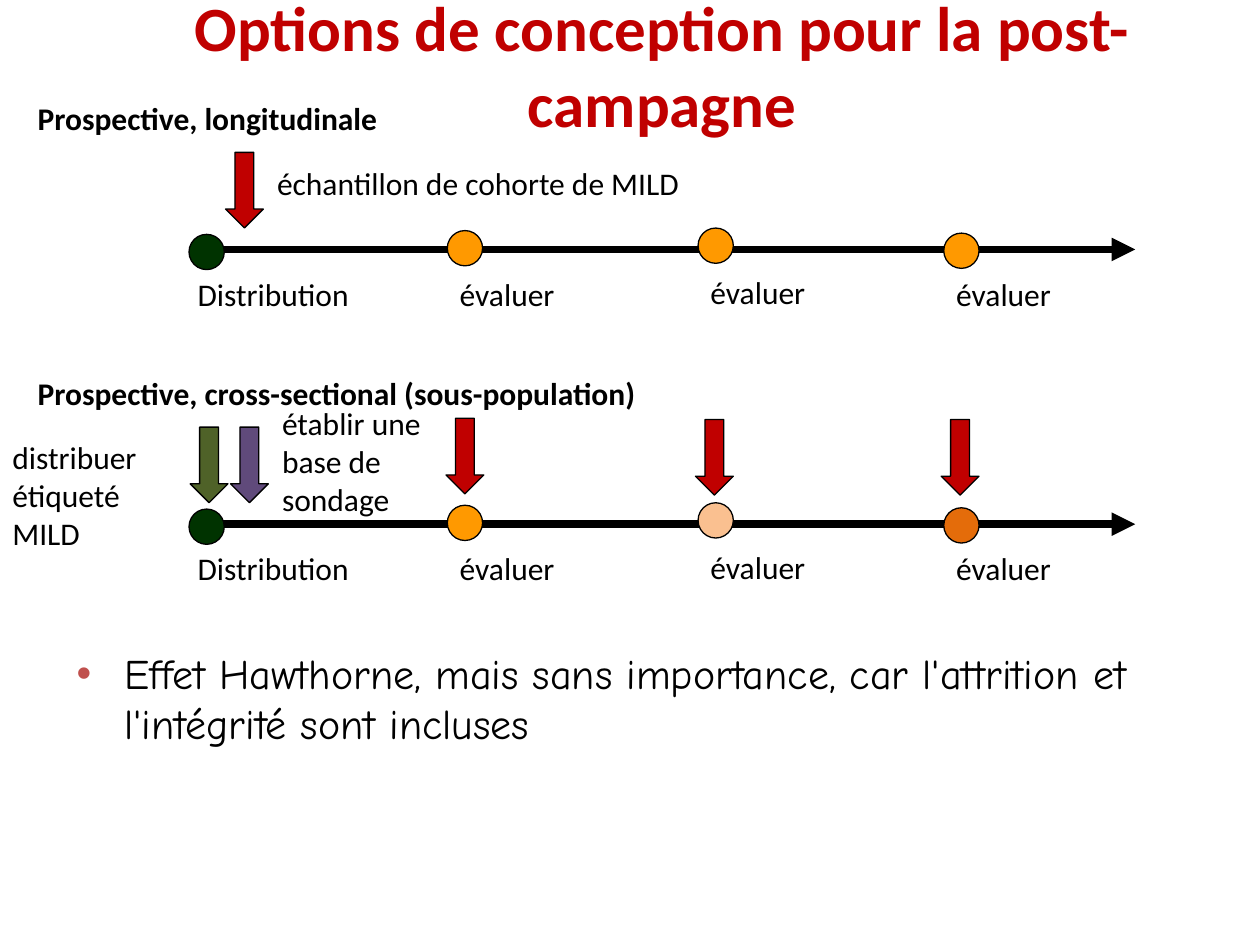
from lxml import etree
from pptx import Presentation
from pptx.dml.color import RGBColor
from pptx.enum.shapes import MSO_CONNECTOR, MSO_SHAPE
from pptx.enum.text import MSO_ANCHOR, PP_ALIGN
from pptx.oxml.ns import qn
from pptx.util import Inches, Pt

BLACK = RGBColor(0x00, 0x00, 0x00)
RED = RGBColor(0xC0, 0x00, 0x00)
DARK_GREEN = RGBColor(0x00, 0x33, 0x00)
OLIVE = RGBColor(0x4F, 0x62, 0x28)
PURPLE = RGBColor(0x60, 0x4A, 0x7B)
AMBER = RGBColor(0xFF, 0x99, 0x00)
PEACH = RGBColor(0xFA, 0xC0, 0x90)
ORANGE = RGBColor(0xE4, 0x6C, 0x0A)
BULLET_RED = RGBColor(0xC0, 0x50, 0x4D)

TITLE = "Options de conception pour la post-campagne"
CONCLUSION = ("Effet Hawthorne, mais sans importance, "
              "car l'attrition et l'intégrité sont incluses")

DOT, ARROW_WIDTH, ARROW_HEIGHT = 0.28, 0.3, 0.6
AXIS_START, AXIS_END = 1.62, 9.01
LABEL_HEIGHT, HEADING_RISE = 0.4, 1.24

# label, dot left, dot top, label left, label top, label width (tops from the axis)
STAGES = [
    ("Distribution", 1.5, -0.12, 1.47, 0.15, 1.52),
    ("évaluer", 3.55, -0.15, 3.55, 0.15, 1.12),
    ("évaluer", 5.54, -0.17, 5.54, 0.14, 1.12),
    ("évaluer", 7.49, -0.13, 7.49, 0.15, 1.12),
]

TIMELINES = [
    {
        "heading": "Prospective, longitudinale",
        "axis": 1.98,
        "dots": [DARK_GREEN, AMBER, AMBER, AMBER],
        "arrows": [(1.79, -0.77, RED)],
        "notes": [("échantillon de cohorte de MILD", 2.1, -0.73, 3.58, 0.4)],
    },
    {
        "heading": "Prospective, cross-sectional (sous-population)",
        "axis": 4.16,
        "dots": [DARK_GREEN, AMBER, PEACH, ORANGE],
        "arrows": [(1.51, -0.77, OLIVE), (1.83, -0.77, PURPLE),
                   (3.54, -0.84, RED), (5.52, -0.83, RED), (7.47, -0.83, RED)],
        "notes": [("distribuer étiqueté MILD", 0, -0.73, 1.61, 1.01),
                  ("établir une base de sondage", 2.14, -1, 1.4, 1.01)],
    },
]


def add_text(page, text, left, top, width, height, size=18, bold=False,
             color=BLACK, font="Calibri"):
    box = page.shapes.add_textbox(*map(Inches, (left, top, width, height)))
    box.text_frame.word_wrap = True
    box.text_frame.text = text
    paragraph = box.text_frame.paragraphs[0]
    span = paragraph.runs[0].font
    span.name, span.size, span.bold = font, Pt(size), bold
    span.color.rgb = color
    return box.text_frame, paragraph


def add_marker(page, kind, left, top, width, height, color):
    marker = page.shapes.add_shape(kind, *map(Inches, (left, top, width, height)))
    marker.shadow.inherit = False
    marker.fill.solid()
    marker.fill.fore_color.rgb = color
    marker.line.color.rgb = BLACK
    marker.line.width = Pt(0.75)


def add_axis(page, height):
    axis = page.shapes.add_connector(
        MSO_CONNECTOR.STRAIGHT,
        *map(Inches, (AXIS_START, height, AXIS_END, height)))
    axis.line.color.rgb = BLACK
    axis.line.width = Pt(4.5)
    etree.SubElement(axis.line._get_or_add_ln(), qn("a:tailEnd"), type="triangle")
    etree.SubElement(axis._element.spPr, qn("a:effectLst"))


def add_timeline(page, timeline):
    axis = timeline["axis"]
    add_axis(page, axis)
    for stage, color in zip(STAGES, timeline["dots"]):
        label, dot_left, dot_top, left, top, width = stage
        add_marker(page, MSO_SHAPE.OVAL, dot_left, axis + dot_top, DOT, DOT, color)
        add_text(page, label, left, axis + top, width, LABEL_HEIGHT)
    for left, top, color in timeline["arrows"]:
        add_marker(page, MSO_SHAPE.DOWN_ARROW, left, axis + top,
                   ARROW_WIDTH, ARROW_HEIGHT, color)
    add_text(page, timeline["heading"], 0.2, axis - HEADING_RISE, 5.47,
             LABEL_HEIGHT, bold=True)
    for text, left, top, width, height in timeline["notes"]:
        add_text(page, text, left, axis + top, width, height)


def add_bullet(paragraph, color):
    properties = paragraph._p.get_or_add_pPr()
    properties.set("marL", str(Inches(0.38)))
    properties.set("indent", str(-Inches(0.38)))
    bullet_color = etree.SubElement(properties, qn("a:buClr"))
    etree.SubElement(bullet_color, qn("a:srgbClr"), val=str(color))
    etree.SubElement(properties, qn("a:buFont"), typeface="Arial")
    etree.SubElement(properties, qn("a:buChar"), char="•")


def main():
    deck = Presentation()
    deck.slide_width, deck.slide_height = Inches(10), Inches(7.5)
    page = deck.slides.add_slide(deck.slide_layouts[6])
    for timeline in TIMELINES:
        add_timeline(page, timeline)

    frame, paragraph = add_text(page, CONCLUSION, 0.51, 5.09, 9.22, 2.6,
                                size=24, font="Comic Neue")
    paragraph.space_before = Pt(4.8)
    add_bullet(paragraph, BULLET_RED)

    frame, paragraph = add_text(page, TITLE, 0.6, 0.03, 9.31, 0.96,
                                size=36, bold=True, color=RED)
    frame.vertical_anchor = MSO_ANCHOR.MIDDLE
    paragraph.alignment = PP_ALIGN.CENTER
    deck.save("out.pptx")


if __name__ == "__main__":
    main()
